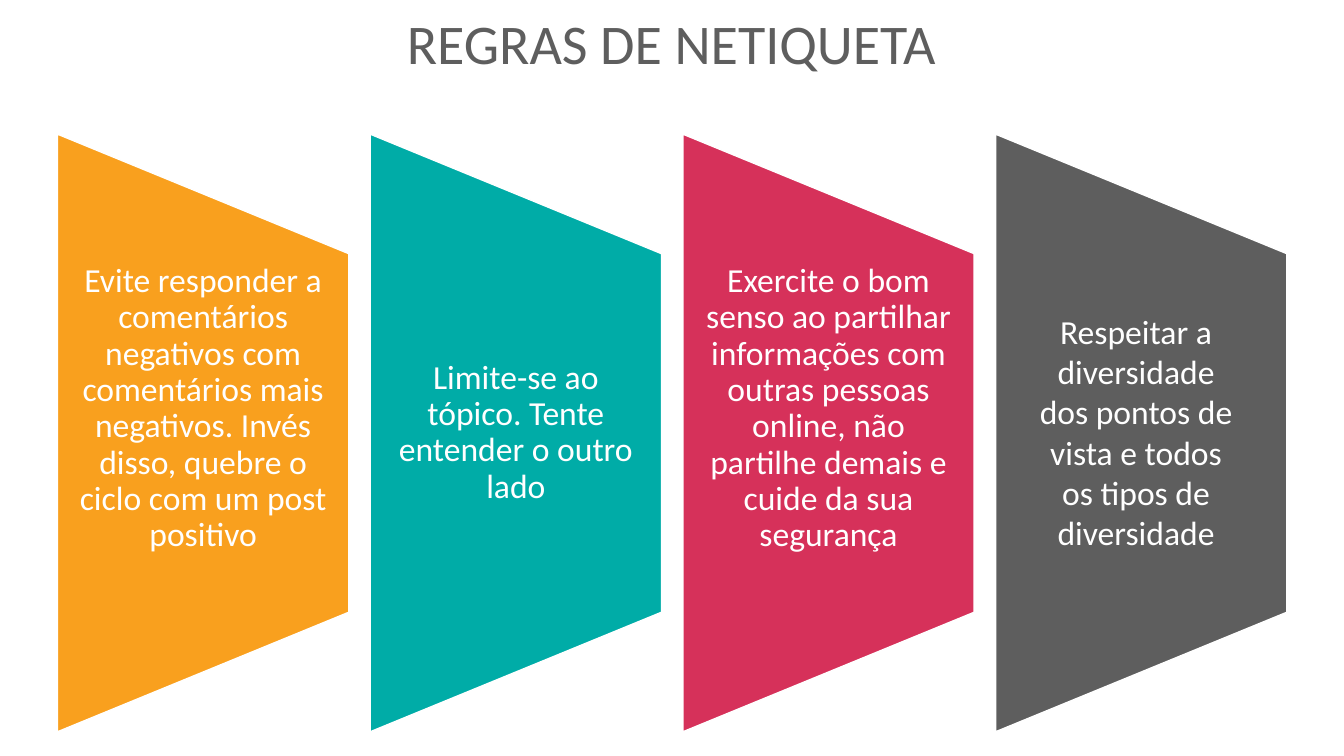
from pptx import Presentation
from pptx.dml.color import RGBColor
from pptx.enum.shapes import MSO_SHAPE as Shape
from pptx.enum.text import MSO_ANCHOR as Anchor, MSO_AUTO_SIZE as AutoSize, PP_ALIGN as Align
from pptx.util import Cm, Pt

ORANGE = RGBColor(0xF9, 0xA0, 0x1E)
TEAL = RGBColor(0x00, 0xAC, 0xA7)
CRIMSON = RGBColor(0xD6, 0x31, 0x5A)
GRAY = RGBColor(0x5E, 0x5E, 0x5E)
WHITE = RGBColor(0xFF, 0xFF, 0xFF)

PANEL_LEFT, PANEL_PITCH = 1.45, 7.88
PANEL_WIDTH, PANEL_HEIGHT, PANEL_MIDDLE = 7.34, 15.06, 10.91
RULE_HEIGHT = 9.04

RULES = [
    (ORANGE, "Evite responder a comentários negativos com comentários mais "
             "negativos. Invés disso, quebre o ciclo com um post positivo", 5.78),
    (TEAL, "Limite-se ao tópico. Tente entender o outro lado", 6.39),
    (CRIMSON, "Exercite o bom senso ao partilhar informações com outras pessoas "
              "online, não partilhe demais e cuide da sua segurança", 5.78),
]
DIVERSITY = "Respeitar a diversidade dos pontos de vista e todos os tipos de diversidade"


class NetiquetteSlide:
    font_name = "Calibri"

    def __init__(self, deck):
        self.slide = deck.slides.add_slide(deck.slide_layouts[5])

    def set_text(self, frame, text, size, color, align, spacing):
        frame.word_wrap = True
        paragraph = frame.paragraphs[0]
        paragraph.text = text
        paragraph.alignment = align
        paragraph.line_spacing = spacing
        paragraph.font.name = self.font_name
        paragraph.font.size = Pt(size)
        paragraph.font.color.rgb = color

    def title(self, text, left, top, width, height):
        heading = self.slide.shapes.title
        heading.left, heading.top = Cm(left), Cm(top)
        heading.width, heading.height = Cm(width), Cm(height)
        frame = heading.text_frame
        frame.auto_size = AutoSize.NONE
        frame.vertical_anchor = Anchor.TOP
        self.set_text(frame, text, 40, GRAY, Align.LEFT, 0.9)

    def panel(self, left, color):
        center = left + PANEL_WIDTH / 2
        panel = self.slide.shapes.add_shape(
            Shape.FLOWCHART_MANUAL_OPERATION,
            Cm(center - PANEL_HEIGHT / 2), Cm(PANEL_MIDDLE - PANEL_WIDTH / 2),
            Cm(PANEL_HEIGHT), Cm(PANEL_WIDTH))
        panel.rotation = 270
        panel.shadow.inherit = False
        panel.fill.solid()
        panel.fill.fore_color.rgb = color
        panel.line.color.rgb = WHITE
        panel.line.width = Pt(1)

    def rule(self, text, left, top, width, height, spacing=1.0):
        box = self.slide.shapes.add_textbox(Cm(left), Cm(top), Cm(width), Cm(height))
        self.set_text(box.text_frame, text, 24, WHITE, Align.CENTER, spacing)
        return box.text_frame

    def panel_rule(self, text, left, top):
        frame = self.rule(text, left, top, PANEL_WIDTH, RULE_HEIGHT, 0.9)
        frame.vertical_anchor = Anchor.MIDDLE
        frame.margin_left = frame.margin_right = Cm(0.43)
        frame.margin_top = frame.margin_bottom = 0


def main():
    deck = Presentation()
    deck.slide_width, deck.slide_height = Cm(33.87), Cm(19.05)
    netiquette = NetiquetteSlide(deck)
    netiquette.title("REGRAS DE NETIQUETA", 10, 0.28, 14.63, 2.64)
    for index, (color, text, top) in enumerate(RULES):
        left = PANEL_LEFT + index * PANEL_PITCH
        netiquette.panel(left, color)
        netiquette.panel_rule(text, left, top)
    netiquette.panel(PANEL_LEFT + len(RULES) * PANEL_PITCH, GRAY)
    netiquette.rule(DIVERSITY, 25.91, 7.7, 5.44, 7.44)
    deck.save("out.pptx")


if __name__ == "__main__":
    main()
